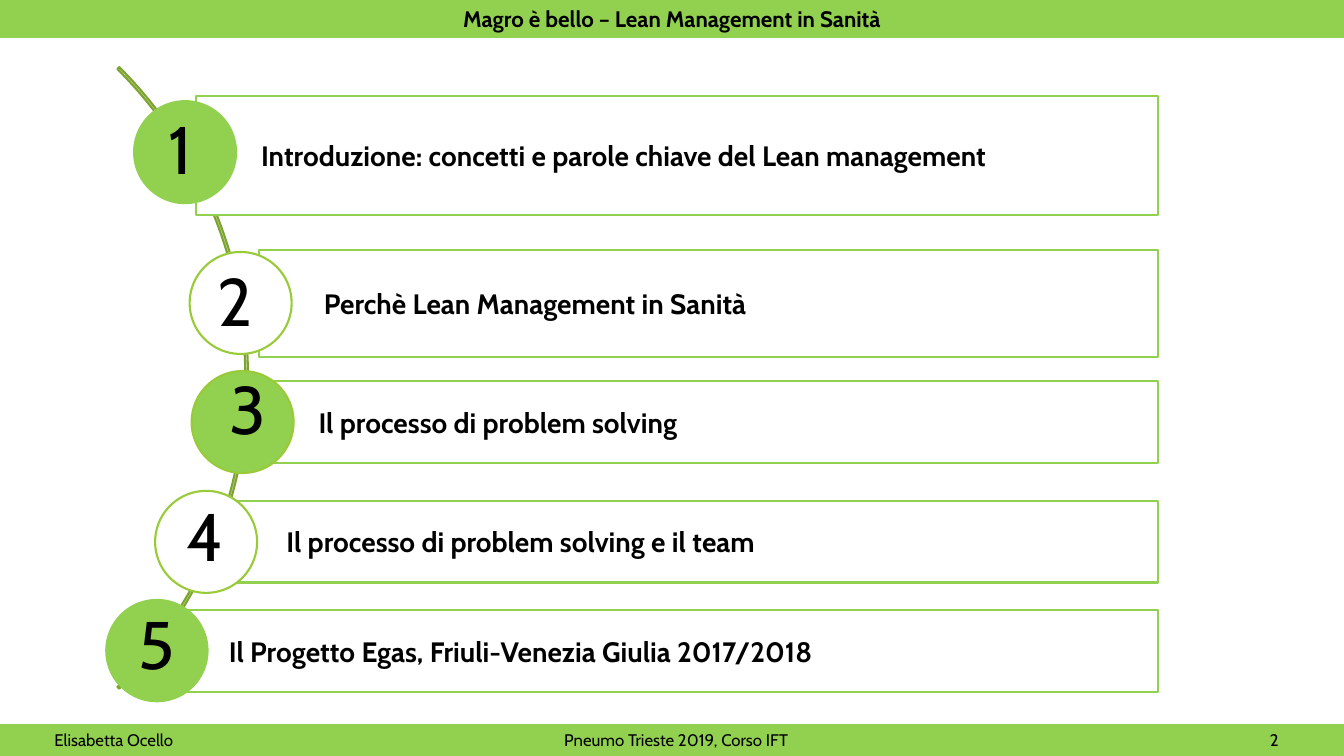
import pptx
import pptx.util
import pptx.dml.color
import pptx.enum.shapes
import pptx.enum.text
from lxml import etree
from pptx.oxml.ns import qn

Cm, Pt = pptx.util.Cm, pptx.util.Pt
RGBColor = pptx.dml.color.RGBColor
MSO_SHAPE = pptx.enum.shapes.MSO_SHAPE
PP_ALIGN = pptx.enum.text.PP_ALIGN
MSO_ANCHOR = pptx.enum.text.MSO_ANCHOR

# Content
HEADER = "Magro è bello – Lean Management in Sanità"
FOOTER = ("Elisabetta Ocello", "Pneumo Trieste 2019, Corso IFT", "2")
TOPICS = [
    "Introduzione: concetti e parole chiave del Lean management",
    "Perchè Lean Management in Sanità",
    "Il processo di problem solving",
    "Il processo di problem solving e il team",
    "Il Progetto Egas, Friuli-Venezia Giulia 2017/2018",
]

# Look
GREEN = RGBColor(0x92, 0xD0, 0x50)
LIME = RGBColor(0x99, 0xCB, 0x38)
OLIVE = RGBColor(0x7B, 0xA3, 0x2D)
WHITE = RGBColor(0xFF, 0xFF, 0xFF)
BLACK = RGBColor(0, 0, 0)
FONT = "Cabin"

# Layout in cm
SLIDE_W, SLIDE_H = 33.87, 19.05
BAR_RIGHT = 29.19
CIRCLE = 2.57
DIGIT_W, DIGIT_H = 1.4, 2.31
FOOTER_INSET = 1.37
FOOTER_TABS = (12.85, 30.63)
# Per topic: bar (left, top, height), circle (left, top), digit (left, top),
# circle fill, circle outline and its width
STEPS = [
    ((4.95, 2.41, 3.0), (3.38, 2.55), (3.84, 2.57), GREEN, GREEN, 1.5),
    ((6.53, 6.3, 2.69), (4.78, 6.35), (5.23, 6.4), WHITE, LIME, 1.5),
    ((6.4, 9.6, 2.06), (4.83, 9.35), (5.54, 9.12), GREEN, LIME, 1.5),
    ((5.59, 12.62, 2.06), (3.91, 12.37), (4.45, 12.32), WHITE, LIME, 1.5),
    ((4.14, 15.37, 2.06), (2.67, 15.11), (3.23, 15.06), GREEN, GREEN, 1),
]


def place(left, top, width, height):
    return Cm(left), Cm(top), Cm(width), Cm(height)


def paint(part, fill, outline, weight):
    if fill is None:
        part.fill.background()
    else:
        part.fill.solid()
        part.fill.fore_color.rgb = fill
    part.line.color.rgb = outline
    part.line.width = Pt(weight)


def add_part(kind, box, fill, outline, weight):
    part = slide.shapes.add_shape(kind, *place(*box))
    part.shadow.inherit = False
    paint(part, fill, outline, weight)
    return part


def write(part, words, size, bold=False, align=PP_ALIGN.LEFT, tabs=(), **frame_values):
    frame = part.text_frame
    values = {"word_wrap": True, "auto_size": pptx.enum.text.MSO_AUTO_SIZE.NONE,
              "vertical_anchor": MSO_ANCHOR.MIDDLE, **frame_values}
    for name, value in values.items():
        setattr(frame, name, value)
    paragraph = frame.paragraphs[0]
    paragraph.alignment = align
    if tabs:
        tab_list = etree.SubElement(paragraph._p.get_or_add_pPr(), qn("a:tabLst"))
        for position in tabs:
            etree.SubElement(tab_list, qn("a:tab"), pos=str(Cm(position)), algn="l")
    run = paragraph.add_run()
    run.text = words
    for name, value in {"name": FONT, "size": Pt(size), "bold": bold}.items():
        setattr(run.font, name, value)
    run.font.color.rgb = BLACK


deck = pptx.Presentation()
deck.slide_width, deck.slide_height = Cm(SLIDE_W), Cm(SLIDE_H)
slide = deck.slides.add_slide(deck.slide_layouts[5])

# Header band
header = slide.shapes.title
header.left, header.top, header.width, header.height = place(0, 0, SLIDE_W, 0.94)
paint(header, GREEN, GREEN, 0.75)
write(header, HEADER, 16, bold=True, align=PP_ALIGN.CENTER)

# Footer band
footer = add_part(MSO_SHAPE.RECTANGLE, (0, 18.26, SLIDE_W, 0.77), GREEN, GREEN, 0.75)
write(footer, "\t".join(FOOTER), 12, tabs=FOOTER_TABS,
      margin_left=Cm(FOOTER_INSET), margin_right=0)

# Arc behind the steps
arc = add_part(MSO_SHAPE.BLOCK_ARC, (-15.9, -1.55, 22.15, 22.15), None, OLIVE, 1.5)
for index, value in enumerate((189, 27, 0.003)):
    arc.adjustments[index] = value

# Numbered topics
for number, (topic, step) in enumerate(zip(TOPICS, STEPS), start=1):
    (left, top, height), circle_at, digit_at, fill, outline, weight = step
    bar = add_part(MSO_SHAPE.RECTANGLE, (left, top, BAR_RIGHT - left, height),
                   WHITE, GREEN, 1.5)
    write(bar, topic, 20, bold=True, margin_left=Cm(1.63), margin_right=Cm(0.15))
    add_part(MSO_SHAPE.OVAL, (*circle_at, CIRCLE, CIRCLE), fill, outline, weight)
    digit = slide.shapes.add_textbox(*place(*digit_at, DIGIT_W, DIGIT_H))
    write(digit, str(number), 48, align=PP_ALIGN.CENTER, vertical_anchor=MSO_ANCHOR.TOP)

deck.save("out.pptx")
